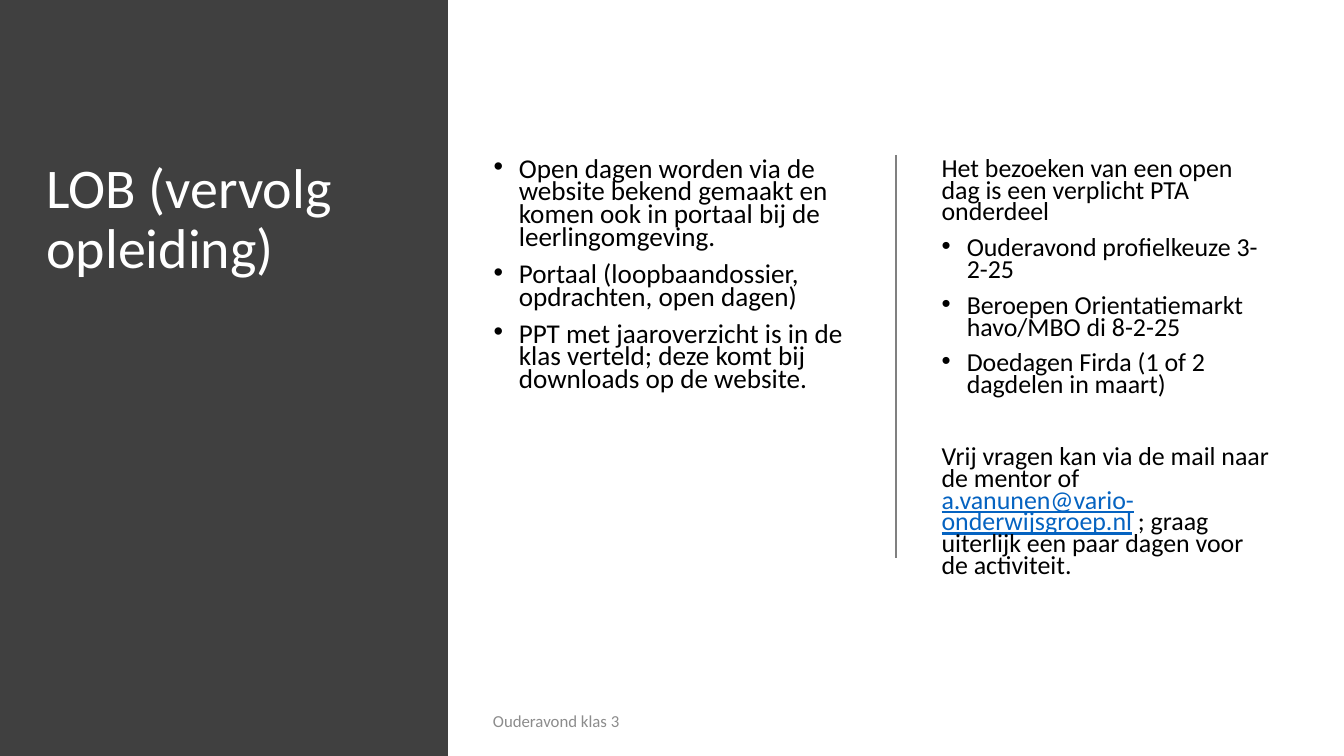
from lxml import etree
from pptx import Presentation
from pptx.dml.color import RGBColor
from pptx.enum.shapes import MSO_CONNECTOR, MSO_SHAPE
from pptx.enum.text import MSO_ANCHOR
from pptx.oxml.ns import qn
from pptx.util import Pt

RECTANGLE = MSO_SHAPE.RECTANGLE
STRAIGHT = MSO_CONNECTOR.STRAIGHT
TOP, MIDDLE = MSO_ANCHOR.TOP, MSO_ANCHOR.MIDDLE

WHITE = RGBColor(0xFF, 0xFF, 0xFF)
BLACK = RGBColor(0x00, 0x00, 0x00)
PANEL_GRAY = RGBColor(0x40, 0x40, 0x40)
DIVIDER_GRAY = RGBColor(0x80, 0x80, 0x80)
FOOTER_GRAY = RGBColor(0x8C, 0x8C, 0x8C)
LINK_BLUE = RGBColor(0x05, 0x63, 0xC1)

FONT = "Calibri"
SLIDE_WIDTH, SLIDE_HEIGHT = 960, 540
PANEL_WIDTH = 320
CONTENT_TOP = 110.7
COLUMN_HEIGHT = 343.4
BULLET_INDENT = 18

OPEN_DAYS = [
    "Open dagen worden via de website bekend gemaakt en komen ook in portaal bij de leerlingomgeving.",
    "Portaal (loopbaandossier, opdrachten, open dagen)",
    "PPT met jaaroverzicht is in de klas verteld; deze komt bij downloads op de website.",
]
ACTIVITIES = [
    "Ouderavond profielkeuze 3-2-25",
    "Beroepen Orientatiemarkt havo/MBO di 8-2-25",
    "Doedagen Firda (1 of 2 dagdelen in maart)",
]


def add_frame(slide, box, anchor=TOP):
    frame = slide.shapes.add_textbox(*map(Pt, box)).text_frame
    frame.word_wrap = True
    frame.vertical_anchor = anchor
    return frame


def add_run(paragraph, text, size, color, underline=None):
    run = paragraph.add_run()
    run.text = text
    run.font.name = FONT
    run.font.size = Pt(size)
    run.font.color.rgb = color
    run.font.underline = underline


def add_paragraph(frame, text, size, color=BLACK, spacing=0.7, before=10, bullet=False):
    first = not frame.paragraphs[0].runs
    paragraph = frame.paragraphs[0] if first else frame.add_paragraph()
    paragraph.line_spacing = spacing
    paragraph.space_before = Pt(0 if first else before)
    if bullet:
        properties = paragraph._p.get_or_add_pPr()
        properties.set("marL", str(Pt(BULLET_INDENT)))
        properties.set("indent", str(-Pt(BULLET_INDENT)))
        etree.SubElement(properties, qn("a:buFont")).set("typeface", "Arial")
        etree.SubElement(properties, qn("a:buChar")).set("char", "•")
    add_run(paragraph, text, size, color)
    return paragraph


def add_title_panel(slide, left, top, width, height):
    panel = slide.shapes.add_shape(RECTANGLE, Pt(left), Pt(top), Pt(width), Pt(height))
    panel.shadow.inherit = False
    panel.fill.solid()
    panel.fill.fore_color.rgb = PANEL_GRAY
    panel.line.fill.background()
    title_box = (left + 26, top + CONTENT_TOP, width - 52, COLUMN_HEIGHT)
    add_paragraph(add_frame(slide, title_box), "LOB (vervolg opleiding)", 40, WHITE, spacing=0.9)


def add_divider(slide, left, top, height):
    divider = slide.shapes.add_connector(STRAIGHT, Pt(left), Pt(top), Pt(left), Pt(top + height))
    divider.line.color.rgb = DIVIDER_GRAY
    divider.line.width = Pt(1)
    etree.SubElement(divider._element.spPr, qn("a:effectLst"))


def add_open_days(slide, *box):
    frame = add_frame(slide, box)
    for text in OPEN_DAYS:
        add_paragraph(frame, text, 19.4, bullet=True)


def add_activities(slide, *box):
    size = 18.5
    frame = add_frame(slide, box)
    add_paragraph(frame, "Het bezoeken van een open dag is een verplicht PTA onderdeel", size)
    for text in ACTIVITIES:
        add_paragraph(frame, text, size, bullet=True)
    # Contact details, set apart from the list
    contact = add_paragraph(frame, "Vrij vragen kan via de mail naar de mentor of ", size, before=35.8)
    add_run(contact, "a.vanunen@vario-onderwijsgroep.nl", size, LINK_BLUE, underline=True)
    add_run(contact, " ; graag uiterlijk een paar dagen voor de activiteit.", size, BLACK)


def add_footer(slide, *box):
    add_paragraph(add_frame(slide, box, MIDDLE), "Ouderavond klas 3", 12, FOOTER_GRAY, spacing=1)


def main():
    presentation = Presentation()
    presentation.slide_width = Pt(SLIDE_WIDTH)
    presentation.slide_height = Pt(SLIDE_HEIGHT)
    slide = presentation.slides.add_slide(presentation.slide_layouts[6])

    add_title_panel(slide, 0, 0, PANEL_WIDTH, SLIDE_HEIGHT)
    add_open_days(slide, 345.5, CONTENT_TOP, 270, COLUMN_HEIGHT)
    add_divider(slide, 640, CONTENT_TOP, 288)
    add_activities(slide, 665.5, CONTENT_TOP, 252, COLUMN_HEIGHT)
    add_footer(slide, 345, 500.5, 320, 28.75)
    presentation.save("out.pptx")


if __name__ == "__main__":
    main()
